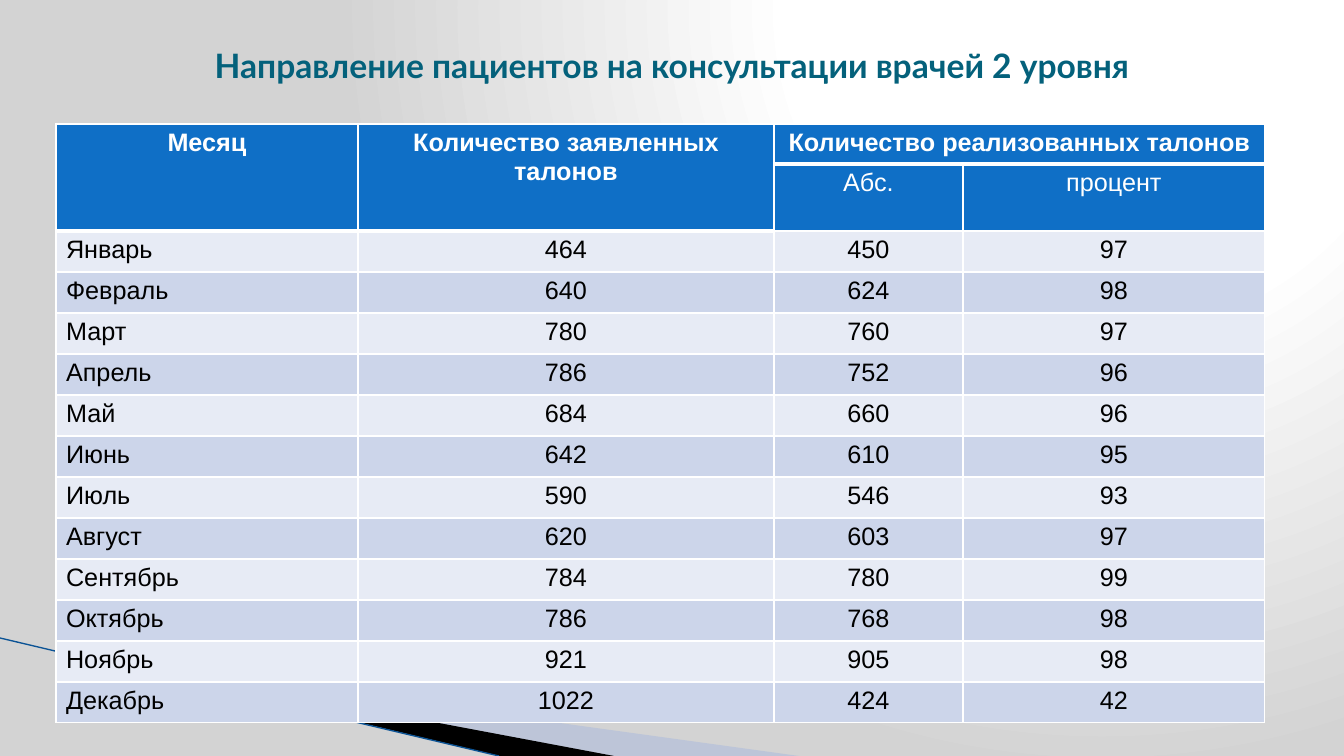
from dataclasses import dataclass

from lxml import etree
from pptx import Presentation
from pptx.dml.color import RGBColor
from pptx.enum.shapes import MSO_CONNECTOR
from pptx.enum.text import MSO_ANCHOR, PP_ALIGN
from pptx.oxml.ns import qn
from pptx.util import Emu, Pt

CENTER, LEFT = PP_ALIGN.CENTER, PP_ALIGN.LEFT
MIDDLE = MSO_ANCHOR.MIDDLE
STRAIGHT = MSO_CONNECTOR.STRAIGHT
EMU_PER_PX = 914400 / 100.8


@dataclass(frozen=True)
class Theme:
    title_font: str = "Lato"
    table_font: str = "Arial"
    title_size: int = 24
    table_size: int = 18
    title: str = "04617B"
    header: str = "0F6FC6"
    bands: tuple = ("E7EBF5", "CCD5EA")
    white: str = "FFFFFF"
    black: str = "000000"
    wedge: str = "9DB2E1"
    ray: str = "0B5395"
    backdrop: tuple = ((0, "FFFFFF"), (40, "FFFFFF"), (100, "D3D3D3"))


THEME = Theme()

TITLE = "Направление пациентов на консультации врачей 2 уровня"
HEADERS = [
    ("Месяц", "Количество заявленных талонов", "Количество реализованных талонов", ""),
    ("", "", "Абс.", "процент"),
]
MONTHS = [
    ("Январь", 464, 450, 97),
    ("Февраль", 640, 624, 98),
    ("Март", 780, 760, 97),
    ("Апрель", 786, 752, 96),
    ("Май", 684, 660, 96),
    ("Июнь", 642, 610, 95),
    ("Июль", 590, 546, 93),
    ("Август", 620, 603, 97),
    ("Сентябрь", 784, 780, 99),
    ("Октябрь", 786, 768, 98),
    ("Ноябрь", 921, 905, 98),
    ("Декабрь", 1022, 424, 42),
]
COLUMN_WIDTHS = [302, 416, 189, 302]
ROW_HEIGHTS = [40, 67] + [41] * len(MONTHS)


def px(length):
    return Emu(round(length * EMU_PER_PX))


def add_color(parent, color):
    return etree.SubElement(parent, qn("a:srgbClr"), val=color)


def paint_backdrop(slide):
    """Radial gradient whose bright focus lies at the upper right."""
    slide.background.fill.gradient()
    gradient = slide.element.find(".//" + qn("a:gradFill"))
    for child in list(gradient):
        gradient.remove(child)
    stops = etree.SubElement(gradient, qn("a:gsLst"))
    for percent, color in THEME.backdrop:
        add_color(etree.SubElement(stops, qn("a:gs"), pos=str(percent * 1000)), color)
    focus = etree.SubElement(gradient, qn("a:path"), {"path": "circle"})
    etree.SubElement(focus, qn("a:fillToRect"), l="65000", t="0", r="0", b="98000")


def add_wedge(slide, corners, color, opacity=100):
    builder = slide.shapes.build_freeform(*corners[0], scale=EMU_PER_PX)
    builder.add_line_segments(corners[1:], close=True)
    wedge = builder.convert_to_shape()
    wedge.shadow.inherit = False
    wedge.fill.solid()
    wedge.fill.fore_color.rgb = RGBColor.from_string(color)
    wedge.line.fill.background()
    if opacity < 100:
        tint = wedge.element.spPr.find(".//" + qn("a:srgbClr"))
        etree.SubElement(tint, qn("a:alpha"), val=str(opacity * 1000))


def add_ray(slide, start, end):
    ray = slide.shapes.add_connector(STRAIGHT, *map(px, start + end))
    ray.line.color.rgb = RGBColor.from_string(THEME.ray)
    ray.line.width = Pt(0.95)
    etree.SubElement(ray.element.spPr, qn("a:effectLst"))


def write(paragraph, text, font, size, color, bold=False, align=CENTER):
    paragraph.alignment = align
    run = paragraph.add_run()
    run.text = text
    run.font.name = font
    run.font.size = Pt(size)
    run.font.bold = bold
    run.font.color.rgb = RGBColor.from_string(color)


def add_title(slide):
    title = slide.shapes.add_textbox(px(67), px(30), px(1210), px(71))
    frame = title.text_frame
    frame.word_wrap = True
    frame.vertical_anchor = MIDDLE
    write(frame.paragraphs[0], TITLE, THEME.title_font, THEME.title_size,
          THEME.title, bold=True)


def style_cell(cell, fill, bottom_width):
    properties = cell._tc.get_or_add_tcPr()
    for side, width in (("L", 1), ("R", 1), ("T", 1), ("B", bottom_width)):
        border = etree.SubElement(properties, qn("a:ln" + side), w=str(Pt(width)))
        add_color(etree.SubElement(border, qn("a:solidFill")), THEME.white)
    cell.fill.solid()
    cell.fill.fore_color.rgb = RGBColor.from_string(fill)


def add_referral_table(slide):
    rows = HEADERS + MONTHS
    table = slide.shapes.add_table(
        len(rows), len(COLUMN_WIDTHS), px(56), px(124),
        px(sum(COLUMN_WIDTHS)), px(sum(ROW_HEIGHTS))).table
    table.first_row = table.horz_banding = False
    for column, width in zip(table.columns, COLUMN_WIDTHS):
        column.width = px(width)
    for row, height in zip(table.rows, ROW_HEIGHTS):
        row.height = px(height)

    for first, last in (((0, 0), (1, 0)), ((0, 1), (1, 1)), ((0, 2), (0, 3))):
        table.cell(*first).merge(table.cell(*last))

    for r, values in enumerate(rows):
        is_header = r < len(HEADERS)
        fill = THEME.header if is_header else THEME.bands[r % 2]
        for c, value in enumerate(values):
            cell = table.cell(r, c)
            thick = r == 0 or (r == 1 and c < 2)
            style_cell(cell, fill, 3 if thick else 1)
            if value != "":
                write(cell.text_frame.paragraphs[0], str(value),
                      THEME.table_font, THEME.table_size,
                      THEME.white if is_header else THEME.black,
                      bold=r == 0,
                      align=CENTER if is_header or c > 0 else LEFT)


def main():
    deck = Presentation()
    deck.slide_width, deck.slide_height = px(1344), px(756)
    slide = deck.slides.add_slide(deck.slide_layouts[6])
    paint_backdrop(slide)
    add_wedge(slide, [(74, 656), (799, 756), (613, 756)], THEME.wedge, opacity=40)
    add_wedge(slide, [(72, 654), (614, 756), (500, 756)], THEME.black)
    add_ray(slide, (0, 638), (499, 756))
    add_referral_table(slide)
    add_title(slide)
    deck.save("out.pptx")


if __name__ == "__main__":
    main()
